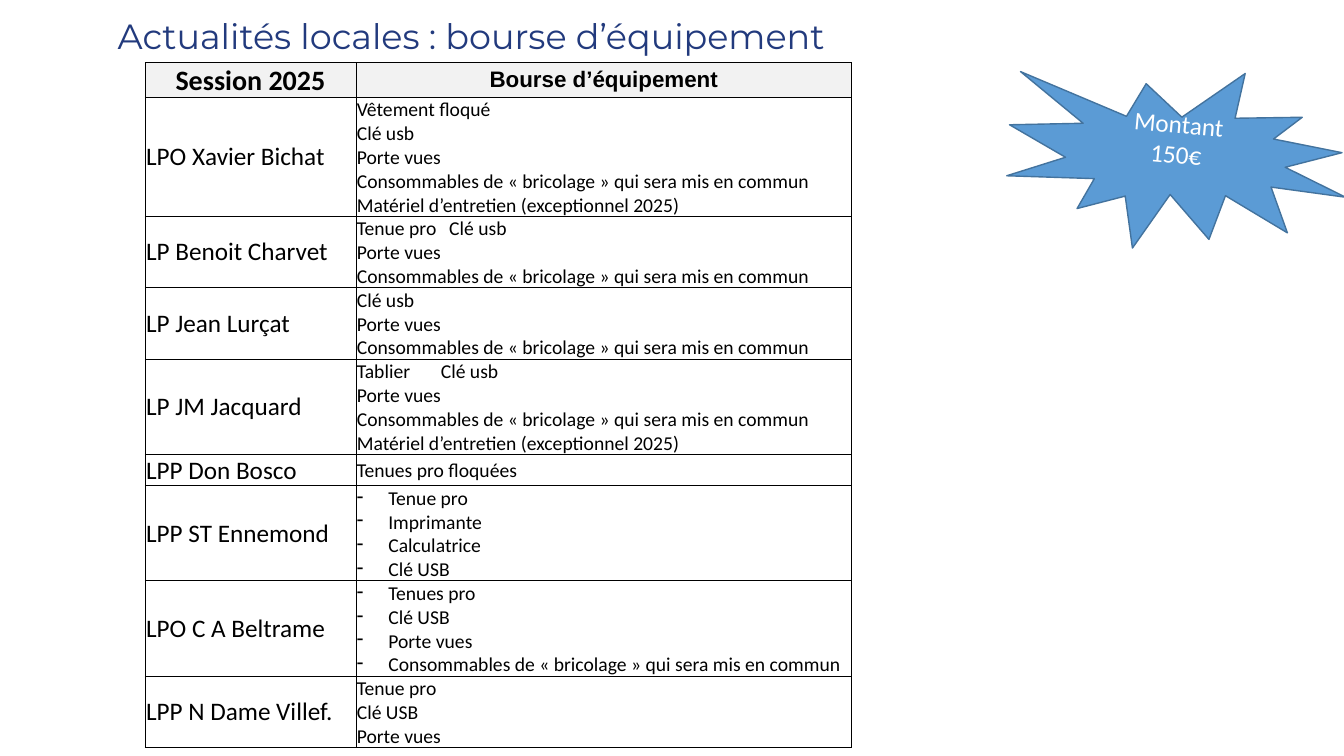
"""Build the slide on equipment grants: a table of schools and a star with the amount."""
from lxml.etree import SubElement
from pptx import Presentation
from pptx.dml.color import RGBColor
from pptx.enum.shapes import MSO_SHAPE as Shape
from pptx.enum.text import MSO_ANCHOR as Anchor, MSO_AUTO_SIZE as AutoSize, PP_ALIGN as Align
from pptx.oxml.ns import qn
from pptx.util import Pt

TITLE = "Actualités locales : bourse d’équipement"
HEADINGS = [("Session 2025", "Calibri", 20), ("Bourse d’équipement", "Arial", 16)]
SUPPLIES = "Consommables de «\u00a0bricolage\u00a0» qui sera mis en commun"
CLEANING = "Matériel d’entretien (exceptionnel 2025)"
SCHOOLS = [
    ("LPO Xavier Bichat", ["Vêtement floqué", "Clé usb", "Porte vues", SUPPLIES, CLEANING], {}),
    ("LP Benoit Charvet", ["Tenue pro\tClé usb", "Porte vues", SUPPLIES], {"tab": 66}),
    ("LP Jean Lurçat", ["Clé usb", "Porte vues", SUPPLIES], {}),
    ("LP JM Jacquard", ["Tablier\tClé usb", "Porte vues", SUPPLIES, CLEANING], {"tab": 60}),
    ("LPP Don Bosco", ["Tenues pro floquées"], {}),
    ("LPP ST Ennemond", ["Tenue pro", "Imprimante", "Calculatrice", "Clé USB"], {"dash": 22.5}),
    ("LPO C A Beltrame", ["Tenues pro", "Clé USB", "Porte vues", SUPPLIES], {"dash": 22.5}),
    ("LPP N Dame Villef.", ["Tenue pro", "Clé USB", "Porte vues"], {}),
]
AMOUNT = ["Montant", "150€"]

BLACK = RGBColor(0x00, 0x00, 0x00)
WHITE = RGBColor(0xFF, 0xFF, 0xFF)
NAVY = RGBColor(0x22, 0x3A, 0x7D)
GREY = RGBColor(0xF2, 0xF2, 0xF2)
BLUE = RGBColor(0x5B, 0x9B, 0xD5)
DARK_BLUE = RGBColor(0x43, 0x73, 0x9E)

COLUMNS = [150.5, 354.25]
HEADER_HEIGHT, LINE_HEIGHT, MIN_HEIGHT = 24.3, 17, 22
CELL = {"margin_left": Pt(0.7), "margin_right": Pt(0.7), "margin_top": Pt(0.7),
        "margin_bottom": Pt(0), "vertical_anchor": Anchor.MIDDLE}


def apply(target, values):
    for key, value in values.items():
        setattr(target, key, value)


def write(frame, lines, font, size, color, bold=False, align=Align.LEFT, tab=None, dash=None):
    for index, line in enumerate(lines):
        paragraph = frame.add_paragraph() if index else frame.paragraphs[0]
        paragraph.alignment = align
        props = paragraph._p.get_or_add_pPr()
        if dash:
            props.set("marL", str(Pt(dash)))
            props.set("indent", str(-Pt(dash)))
            SubElement(props, qn("a:buChar"), char="-")
        if tab and "\t" in line:
            stops = SubElement(props, qn("a:tabLst"))
            SubElement(stops, qn("a:tab"), pos=str(Pt(tab)), algn="l")
        run = paragraph.add_run()
        run.text = line
        apply(run.font, {"name": font, "size": Pt(size), "bold": bold})
        run.font.color.rgb = color


def fill_cell(cell, lines, font, size, shade=None, **style):
    props = cell._tc.get_or_add_tcPr()
    for side in "LRTB":
        border = SubElement(props, qn(f"a:ln{side}"), w=str(Pt(0.5)))
        paint = SubElement(border, qn("a:solidFill"))
        SubElement(paint, qn("a:srgbClr"), val=str(BLACK))
    if shade:
        cell.fill.solid()
        cell.fill.fore_color.rgb = shade
    else:
        cell.fill.background()
    apply(cell, CELL)
    write(cell.text_frame, lines, font, size, BLACK, **style)


def add_title(slide):
    title = slide.shapes.add_textbox(Pt(77), Pt(6.5), Pt(851), Pt(37.5)).text_frame
    apply(title, {"word_wrap": True, "auto_size": AutoSize.SHAPE_TO_FIT_TEXT})
    write(title, [TITLE], "Montserrat", 25, NAVY)


def add_grants(slide):
    heights = [HEADER_HEIGHT]
    heights += [max(MIN_HEIGHT, LINE_HEIGHT * len(items)) for _, items, _ in SCHOOLS]
    grants = slide.shapes.add_table(len(heights), len(COLUMNS), Pt(103.7), Pt(44.6),
                                    Pt(sum(COLUMNS)), Pt(sum(heights))).table
    apply(grants, {"first_row": False, "horz_banding": False})
    for column, width in zip(grants.columns, COLUMNS):
        column.width = Pt(width)
    for row, height in zip(grants.rows, heights):
        row.height = Pt(height)
    for index, (heading, font, size) in enumerate(HEADINGS):
        fill_cell(grants.cell(0, index), [heading], font, size, GREY, bold=True, align=Align.CENTER)
    for index, (school, items, layout) in enumerate(SCHOOLS, 1):
        fill_cell(grants.cell(index, 0), [school], "Calibri", 18)
        fill_cell(grants.cell(index, 1), items, "Calibri", 14, **layout)


def add_amount(slide):
    star = slide.shapes.add_shape(Shape.EXPLOSION1, Pt(719.3), Pt(48.2), Pt(244), Pt(131.8))
    star.rotation = 5.5
    star.shadow.inherit = False
    star.fill.solid()
    star.fill.fore_color.rgb = BLUE
    star.line.color.rgb = DARK_BLUE
    star.line.width = Pt(1)
    apply(star.text_frame, {"word_wrap": True, "vertical_anchor": Anchor.MIDDLE,
                            "margin_bottom": Pt(25.5)})
    write(star.text_frame, AMOUNT, "Calibri", 18, WHITE, align=Align.CENTER)


def main():
    deck = Presentation()
    apply(deck, {"slide_width": Pt(960), "slide_height": Pt(540)})
    slide = deck.slides.add_slide(deck.slide_layouts[6])
    add_title(slide)
    add_grants(slide)
    add_amount(slide)
    deck.save("out.pptx")


if __name__ == "__main__":
    main()
